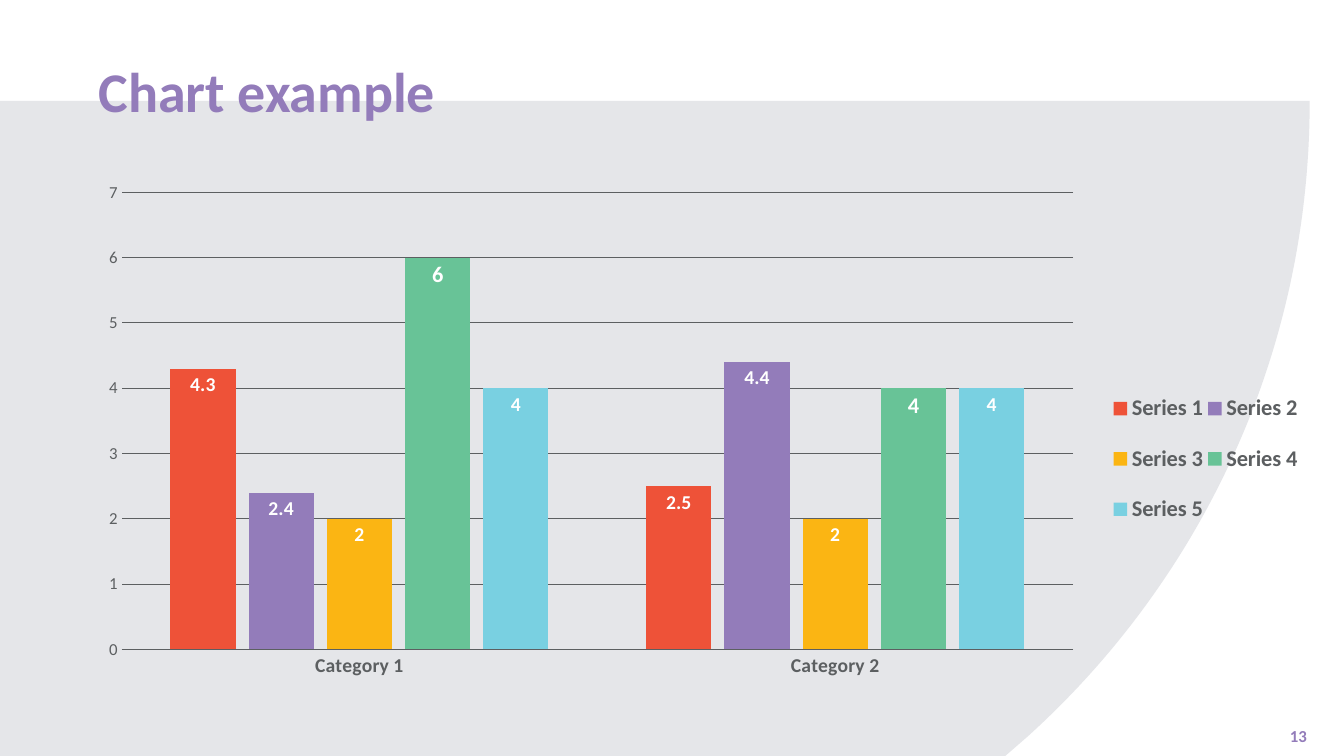
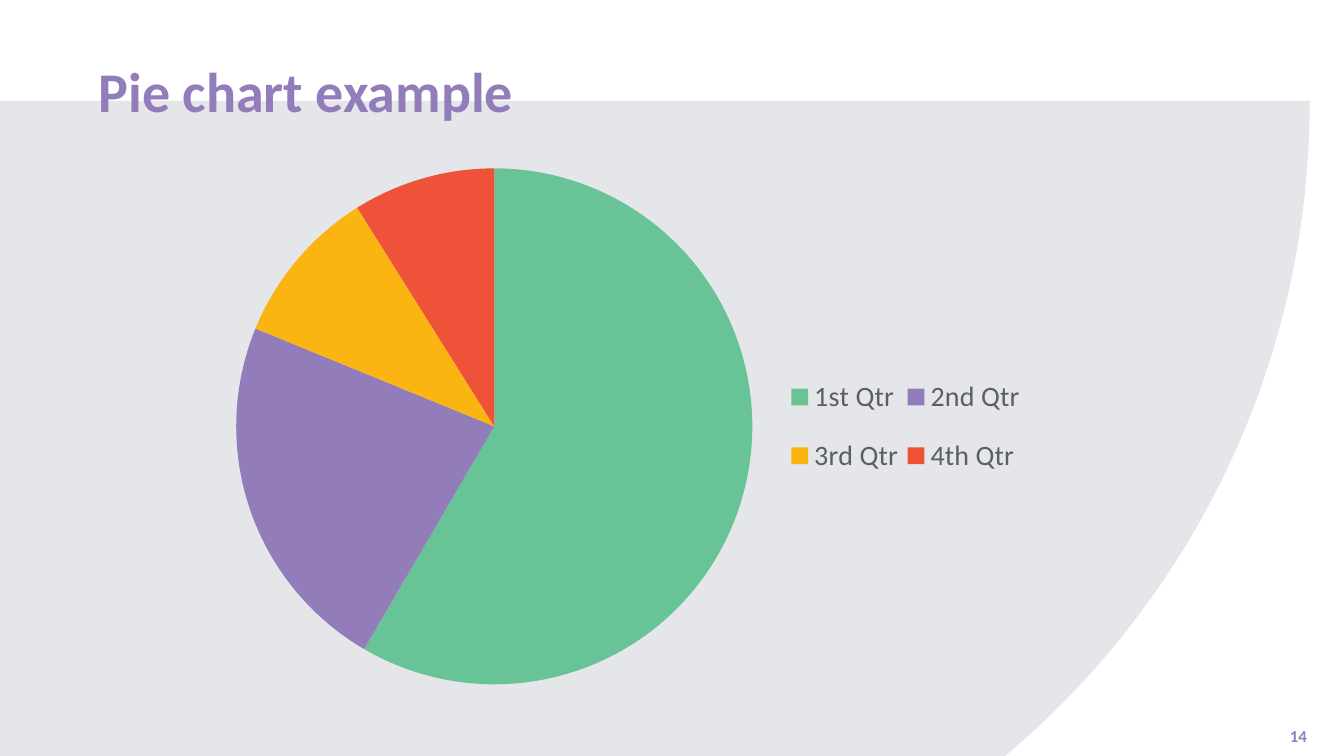
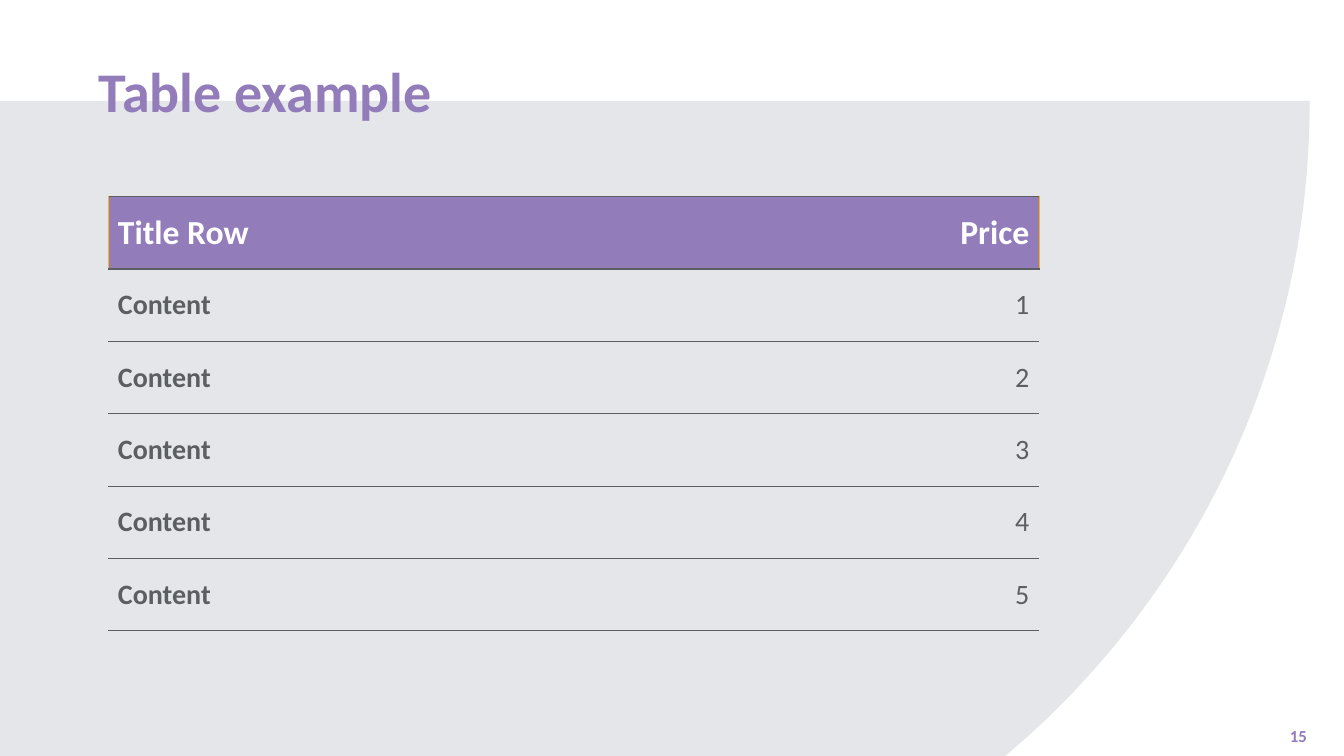
from lxml import etree
from pptx import Presentation
from pptx.chart.data import CategoryChartData
from pptx.dml.color import RGBColor
from pptx.enum.chart import XL_CHART_TYPE, XL_LABEL_POSITION, XL_LEGEND_POSITION, XL_TICK_MARK
from pptx.enum.text import MSO_ANCHOR, PP_ALIGN
from pptx.oxml.ns import qn
from pptx.util import Inches, Pt

COLUMNS, PIE = XL_CHART_TYPE.COLUMN_CLUSTERED, XL_CHART_TYPE.PIE
INSIDE_END = XL_LABEL_POSITION.INSIDE_END
LEGEND_RIGHT = XL_LEGEND_POSITION.RIGHT
NO_TICK = XL_TICK_MARK.NONE
MIDDLE = MSO_ANCHOR.MIDDLE
LEFT, RIGHT = PP_ALIGN.LEFT, PP_ALIGN.RIGHT

rgb = RGBColor.from_string
FONT = "Calibri"
PURPLE, RED, YELLOW = "937CBA", "EE5238", "FBB513"
GREEN, SKY = "68C397", "79D0E1"
GREY, PALE, WHITE = "5C5F61", "E5E6E9", "FFFFFF"


def style_font(font, size, color, bold=False):
    font.name = FONT
    font.size = Pt(size)
    font.bold = bold
    font.color.rgb = rgb(color)


def place_part(chart, tag, index, box):
    part = chart.element.xpath(f".//c:{tag}")[0]
    for old in part.findall(qn("c:layout")):
        part.remove(old)
    layout = etree.Element(qn("c:layout"))
    manual = etree.SubElement(layout, qn("c:manualLayout"))
    if tag == "plotArea":
        etree.SubElement(manual, qn("c:layoutTarget")).set("val", "inner")
    for name in ("xMode", "yMode"):
        etree.SubElement(manual, qn(f"c:{name}")).set("val", "edge")
    for name, share in zip("xywh", box):
        etree.SubElement(manual, qn(f"c:{name}")).set("val", str(share))
    part.insert(index, layout)


prs = Presentation()
prs.slide_width, prs.slide_height = Inches(13.33), Inches(7.5)

curve = [(12.99, 1), (12.99, 3.5), (11.92, 5.74), (10.2, 7.3)]
steps = 60
outline = []
for step in range(steps + 1):
    t = step / steps
    weights = [(1 - t) ** 3, 3 * t * (1 - t) ** 2, 3 * t * t * (1 - t), t ** 3]
    outline.append([Inches(sum(w * p[axis] for w, p in zip(weights, curve))) for axis in (0, 1)])
outline += [(Inches(9.97), Inches(7.5)), (0, Inches(7.5))]

slides = []
for number, title in enumerate(("Chart example", "Pie chart example", "Table example"), 13):
    slide = prs.slides.add_slide(prs.slide_layouts[6])
    slides.append(slide)
    builder = slide.shapes.build_freeform(0, Inches(1))
    builder.add_line_segments(outline, close=True)
    band = builder.convert_to_shape()
    band.shadow.inherit = False
    band.fill.solid()
    band.fill.fore_color.rgb = rgb(PALE)
    band.line.fill.background()
    for text, box, size, align, spacing in (
        (title, (0.88, 0.35, 9.42, 1.18), 40, LEFT, 0.9),
        (str(number), (12.46, 7.15, 0.6, 0.29), 12, RIGHT, 1.0),
    ):
        frame = slide.shapes.add_textbox(*map(Inches, box)).text_frame
        frame.word_wrap = True
        frame.vertical_anchor = MIDDLE
        paragraph = frame.paragraphs[0]
        paragraph.alignment = align
        paragraph.line_spacing = spacing
        run = paragraph.add_run()
        run.text = text
        style_font(run.font, size, PURPLE, True)

column_slide, pie_slide, table_slide = slides

column_series = [
    ("Series 1", (4.3, 2.5), RED, 14),
    ("Series 2", (2.4, 4.4), PURPLE, 14),
    ("Series 3", (2, 2), YELLOW, 14),
    ("Series 4", (6, 4), GREEN, 16),
    ("Series 5", (4, 4), SKY, 14),
]
column_data = CategoryChartData()
column_data.categories = ["Category 1", "Category 2"]
for name, values, color, label_size in column_series:
    column_data.add_series(name, values)

pie_data = CategoryChartData()
pie_data.categories = ["1st Qtr", "2nd Qtr", "3rd Qtr", "4th Qtr"]
pie_data.add_series("Series 1", (59, 23, 10, 9))

charts = []
for slide, kind, data, width, legend_size, legend_bold, plot_box, legend_box in (
    (column_slide, COLUMNS, column_data, 12.04, 16, True,
     (0.027, 0.07, 0.784, 0.84), (0.84, 0.4, 0.16, 0.32)),
    (pie_slide, PIE, pie_data, 9.42, 20, False,
     (0.155, 0.026, 0.544, 0.948), (0.73, 0.37, 0.26, 0.26)),
):
    frame = slide.shapes.add_chart(kind, Inches(0.88), Inches(1.53), Inches(width), Inches(5.4), data)
    chart = frame.chart
    style_font(chart.font, 10, GREY)
    chart.has_title = False
    chart.has_legend = True
    chart.legend.position = LEGEND_RIGHT
    chart.legend.include_in_layout = False
    style_font(chart.legend.font, legend_size, GREY, legend_bold)
    place_part(chart, "plotArea", 0, plot_box)
    place_part(chart, "legend", 1, legend_box)
    charts.append(chart)

column_chart, pie_chart = charts

columns = column_chart.plots[0]
columns.vary_by_categories = False
columns.gap_width = 150
columns.overlap = -20
for series, (name, values, color, label_size) in zip(columns.series, column_series):
    series.format.fill.solid()
    series.format.fill.fore_color.rgb = rgb(color)
    labels = series.data_labels
    labels.show_value = True
    labels.position = INSIDE_END
    style_font(labels.font, label_size, WHITE, True)

categories, scale = column_chart.category_axis, column_chart.value_axis
for axis, size, bold in ((categories, 14, True), (scale, 12, False)):
    axis.major_tick_mark = NO_TICK
    axis.minor_tick_mark = NO_TICK
    style_font(axis.tick_labels.font, size, GREY, bold)
scale.minimum_scale, scale.maximum_scale, scale.major_unit = 0, 7, 1
scale.has_major_gridlines = True
scale.format.line.fill.background()
for line in (categories.format.line, scale.major_gridlines.format.line):
    line.width = Pt(0.75)
    line.color.rgb = rgb(GREY)

pie = pie_chart.plots[0]
pie.vary_by_categories = True
for index, color in enumerate((GREEN, PURPLE, YELLOW, RED)):
    fill = pie.series[0].points[index].format.fill
    fill.solid()
    fill.fore_color.rgb = rgb(color)

rows = [("Title Row", "Price")] + [("Content", str(price)) for price in range(1, 6)]
table = table_slide.shapes.add_table(
    len(rows), 2, Inches(1.07), Inches(1.95), Inches(9.24), Inches(4.31)).table
table.first_row = False
table.horz_banding = False
for row, texts in enumerate(rows):
    header = row == 0
    for column, text in enumerate(texts):
        cell = table.cell(row, column)
        cell.vertical_anchor = MIDDLE
        paragraph = cell.text_frame.paragraphs[0]
        paragraph.alignment = RIGHT if column else LEFT
        run = paragraph.add_run()
        run.text = text
        style_font(run.font, 24 if header else 20, WHITE if header else GREY, header or column == 0)
        borders = {"L": None, "R": None, "T": (GREY, 1), "B": (GREY, 1)}
        if header:
            borders["R" if column else "L"] = (YELLOW, 0.5)
        properties = cell._tc.get_or_add_tcPr()
        for side, border in borders.items():
            edge = etree.SubElement(properties, qn(f"a:ln{side}"))
            if border:
                color, weight = border
                edge.set("w", str(Pt(weight)))
                solid = etree.SubElement(edge, qn("a:solidFill"))
                etree.SubElement(solid, qn("a:srgbClr")).set("val", color)
            else:
                etree.SubElement(edge, qn("a:noFill"))
        if header:
            cell.fill.solid()
            cell.fill.fore_color.rgb = rgb(PURPLE)
        else:
            cell.fill.background()

prs.save("out.pptx")
